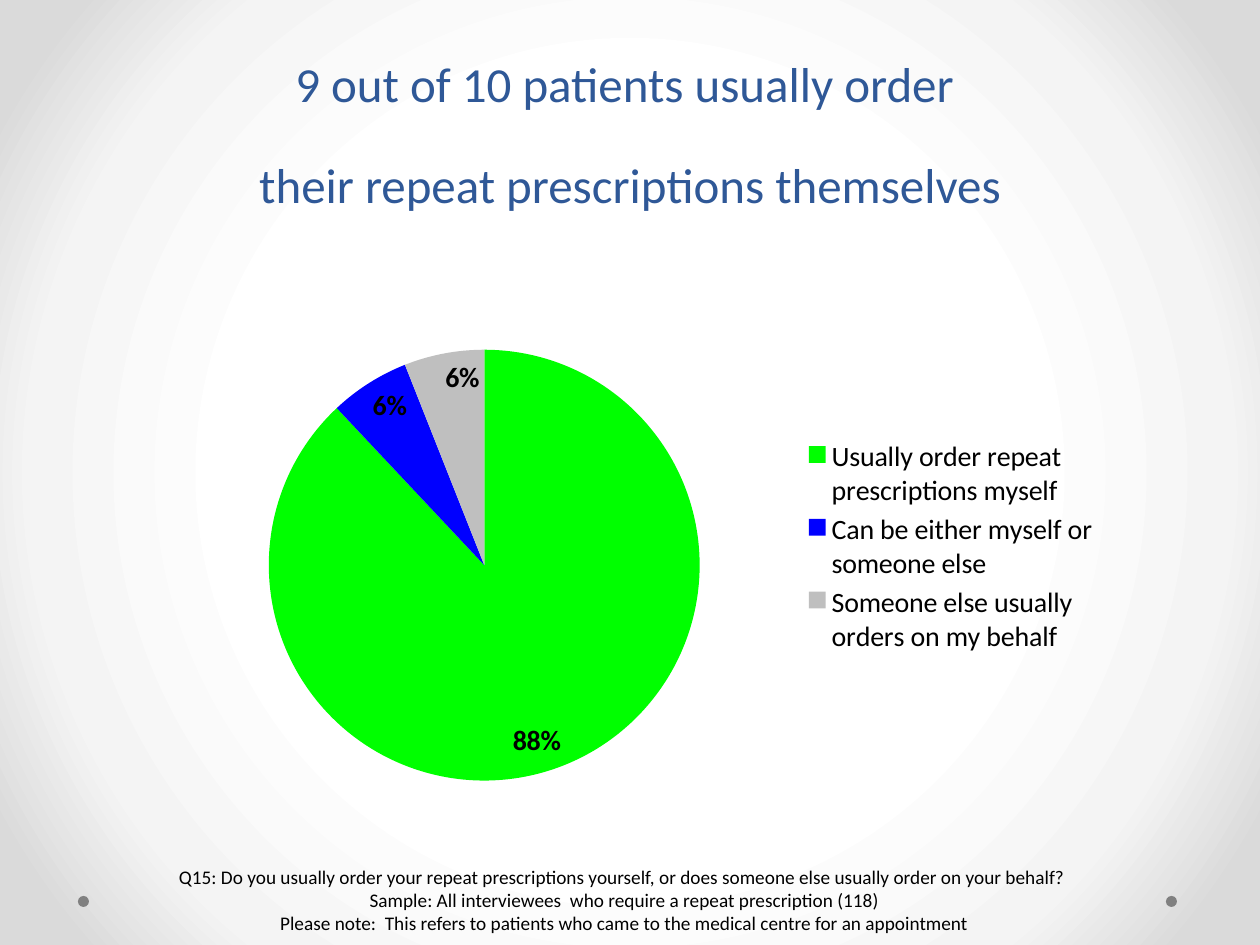
from lxml import etree
from pptx import Presentation
from pptx import util as u
from pptx.chart import data
from pptx.dml import color
from pptx.enum import chart as ch, shapes, text
from pptx.oxml import ns

SCALE = 914400 / 126
FACE = "Calibri"
HUES = {
    "white": "FFFFFF", "pale": "F4F4F4", "edge": "DADADA", "dot": "808080",
    "title": "2F5897", "black": "000000",
    "self": "00FF00", "both": "0000FF", "other": "BFBFBF",
}


def px(n):
    return u.Emu(round(n * SCALE))


def hue(name):
    return color.RGBColor.from_string(HUES[name])


def apply(item, form):
    for key, value in form.items():
        setattr(item, key, value)


def style(font, size, name, bold=False):
    apply(font, {"name": FACE, "size": u.Pt(size), "bold": bold})
    font.color.rgb = hue(name)


def sub(node, tag, **attrs):
    return etree.SubElement(node, ns.qn(tag), **attrs)


def backdrop(slide):
    fill = slide.background.fill
    fill.gradient()
    grad = slide.element.find(".//" + ns.qn("a:gradFill"))
    for node in list(grad):
        grad.remove(node)
    stops = sub(grad, "a:gsLst")
    for pos, name in ((50, "white"), (76, "pale"), (92, "edge")):
        stop = sub(stops, "a:gs", pos=str(pos * 1000))
        sub(stop, "a:srgbClr", val=HUES[name])
    ring = sub(grad, "a:path", path="circle")
    sub(ring, "a:fillToRect", **dict.fromkeys("ltrb", "50000"))


def dots(slide, box):
    left, top, width, size = box
    for x in (left, left + width - size):
        dot = slide.shapes.add_shape(shapes.MSO_SHAPE.OVAL, px(x), px(top), px(size), px(size))
        dot.shadow.inherit = False
        dot.fill.solid()
        dot.fill.fore_color.rgb = hue("dot")
        dot.line.fill.background()


def words(slide, box, copy, size, name, anchor, gap=None):
    frame = slide.shapes.add_textbox(*map(px, box)).text_frame
    apply(frame, {"word_wrap": True, "vertical_anchor": anchor})
    para = frame.paragraphs[0]
    para.text = copy
    apply(para, {"alignment": text.PP_ALIGN.CENTER, "line_spacing": gap})
    for run in para.runs:
        style(run.font, size, name)


def place(node, before, inner, box):
    old = node.find(ns.qn("c:layout"))
    if old is not None:
        node.remove(old)
    plan = etree.Element(ns.qn("c:layout"))
    spot = sub(plan, "c:manualLayout")
    if inner:
        sub(spot, "c:layoutTarget", val="inner")
    for key in "xy":
        sub(spot, f"c:{key}Mode", val="edge")
    for key, value in zip("xywh", box):
        sub(spot, f"c:{key}", val=str(value))
    node.find(ns.qn(before)).addprevious(plan)


def pie(slide, box):
    facts = data.CategoryChartData(number_format="0%")
    facts.categories = [
        "Usually order repeat prescriptions myself",
        "Can be either myself or someone else",
        "Someone else usually orders on my behalf",
    ]
    facts.add_series("Series 1", (0.88, 0.06, 0.06))
    chart = slide.shapes.add_chart(ch.XL_CHART_TYPE.PIE, *map(px, box), facts).chart
    apply(chart, {"has_title": False, "has_legend": True})
    style(chart.font, 10, "black")
    apply(chart.legend, {"position": ch.XL_LEGEND_POSITION.RIGHT, "include_in_layout": False})
    style(chart.legend.font, 16, "black")
    plot = chart.plots[0]
    apply(plot, {"vary_by_categories": True, "has_data_labels": True})
    apply(plot.data_labels, {
        "show_value": True, "show_percentage": False,
        "number_format": "0%", "number_format_is_linked": False,
        "position": ch.XL_LABEL_POSITION.INSIDE_END,
    })
    style(plot.data_labels.font, 16, "black", True)
    for i, name in enumerate(("self", "both", "other")):
        slice_ = plot.series[0].points[i].format
        slice_.fill.solid()
        slice_.fill.fore_color.rgb = hue(name)
        slice_.line.fill.background()
    root = chart.element
    place(root.find(".//" + ns.qn("c:plotArea")), "c:pieChart", True, (0.11, 0.11, 0.46, 0.85))
    place(root.find(".//" + ns.qn("c:legend")), "c:overlay", False, (0.67, 0.28, 0.33, 0.44))


def main():
    deck = Presentation()
    apply(deck, {"slide_width": px(1260), "slide_height": px(945)})
    slide = deck.slides.add_slide(deck.slide_layouts[6])
    backdrop(slide)
    dots(slide, (78, 896, 1099, 11))
    words(slide, (0, 0, 1260, 220),
          "9 out of 10 patients usually order \vtheir repeat prescriptions themselves",
          28, "title", text.MSO_ANCHOR.BOTTOM, u.Pt(58))
    words(slide, (64, 859, 1121, 130),
          "Q15: Do you usually order your repeat prescriptions yourself, "
          "or does someone else usually order on your behalf? \v"
          "Sample: All interviewees  who require a repeat prescription (118)\v"
          "Please note:  This refers to patients who came to the medical centre for an appointment",
          11, "black", text.MSO_ANCHOR.TOP)
    pie(slide, (164, 294, 942, 507))
    deck.save("out.pptx")


if __name__ == "__main__":
    main()
